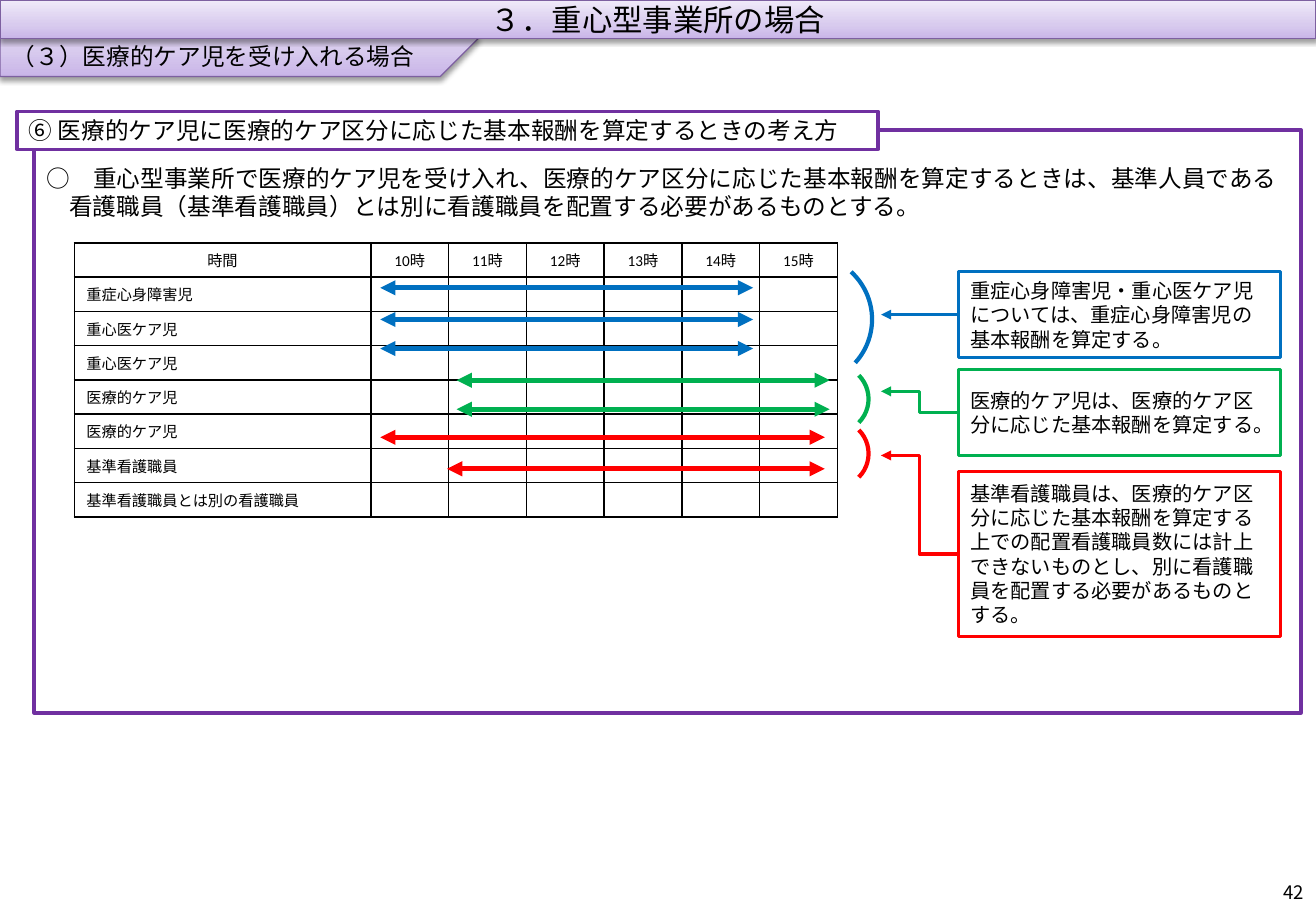
from lxml import etree
from pptx import Presentation
from pptx.dml.color import RGBColor
from pptx.enum import shapes, text
from pptx.oxml.ns import qn
from pptx.util import Pt

BLACK = RGBColor(0x00, 0x00, 0x00)
WHITE = RGBColor(0xFF, 0xFF, 0xFF)
PURPLE = RGBColor(0x70, 0x30, 0xA0)
BANNER_EDGE = RGBColor(0x7D, 0x60, 0xA0)
BLUE = RGBColor(0x00, 0x70, 0xC0)
GREEN = RGBColor(0x00, 0xB0, 0x50)
RED = RGBColor(0xFF, 0x00, 0x00)
BANNER_STOPS = [(0, "C9B5E8"), (35, "D8CBEE"), (100, "F0EAF9")]
CJK, LATIN = "Noto Sans CJK JP", "Calibri"

TITLE = "３．重心型事業所の場合"
SUBTITLE = "（３）医療的ケア児を受け入れる場合"
HEADING = "⑥ 医療的ケア児に医療的ケア区分に応じた基本報酬を算定するときの考え方"
BODY = ("○　重心型事業所で医療的ケア児を受け入れ、医療的ケア区分に応じた基本報酬を算定するときは、"
        "基準人員である看護職員（基準看護職員）とは別に看護職員を配置する必要があるものとする。")
PAGE = "42"

HEADER = ["時間"] + [f"{hour}時" for hour in range(10, 16)]
PEOPLE = ["重症心身障害児", "重心医ケア児", "重心医ケア児", "医療的ケア児", "医療的ケア児",
          "基準看護職員", "基準看護職員とは別の看護職員"]
TABLE_LEFT, TABLE_TOP, ROW_H = 44, 144, 20.3
NAME_W, HOUR_W = 175.8, 46.1

# colour, left, right, y
SPANS = [
    (BLUE, 225.4, 446.4, 170.6), (BLUE, 225.4, 446.4, 189.4), (BLUE, 225.4, 446.4, 206.6),
    (GREEN, 270.7, 491.8, 225.4), (GREEN, 270.7, 491.8, 242.6),
    (RED, 225.4, 488.9, 259.2), (RED, 265, 488.9, 277.9),
]
# colour, left, top, size, rotation
ARCS = [(BLUE, 440.6, 151.2, 76.3, 42.4), (GREEN, 475.2, 216.7, 39.6, 45),
        (RED, 475.2, 249.1, 39.6, 45)]
# colour, top, height, y of the arrow tip, wording
CALLOUTS = [
    (BLUE, 161, 51, 186.5, "重症心身障害児・重心医ケア児については、重症心身障害児の基本報酬を算定する。"),
    (GREEN, 219, 51, 232, "医療的ケア児は、医療的ケア区分に応じた基本報酬を算定する。"),
    (RED, 279.4, 98, 270, "基準看護職員は、医療的ケア区分に応じた基本報酬を算定する上での配置看護職員数には"
                          "計上できないものとし、別に看護職員を配置する必要があるものとする。"),
]
CALLOUT_LEFT, CALLOUT_W, TIP_X = 568, 191, 522.2

prs = Presentation()
prs.slide_width, prs.slide_height = Pt(780), Pt(540)
s = prs.slides.add_slide(prs.slide_layouts[6])


def add_child(parent, tag, **attrs):
    return etree.SubElement(parent, qn(tag), {k: str(v) for k, v in attrs.items()})


def write(tf, words, size, font=CJK, align=None, anchor=text.MSO_ANCHOR.MIDDLE):
    tf.text = words
    tf.word_wrap = True
    tf.vertical_anchor = anchor
    p = tf.paragraphs[0]
    p.alignment = align or text.PP_ALIGN.LEFT
    for r in p.runs:
        r.font.size, r.font.name = Pt(size), font
        r.font.color.rgb = BLACK
        add_child(r.font._element, "a:ea", typeface=CJK)


def add_box(box, edge, width=2, kind=shapes.MSO_SHAPE.RECTANGLE):
    sp = s.shapes.add_shape(kind, *map(Pt, box))
    sp.shadow.inherit = False
    sp.fill.solid()
    sp.fill.fore_color.rgb = WHITE
    sp.line.color.rgb, sp.line.width = edge, Pt(width)
    return sp


def add_banner(box, kind):
    """Purple gradient box with a soft shadow below it."""
    sp = add_box(box, BANNER_EDGE, 0.75, kind)
    sp.fill.gradient()
    sp.fill.gradient_angle = 90
    props = sp._element.spPr
    stops = props.find(qn("a:gradFill")).find(qn("a:gsLst"))
    for old in list(stops):
        stops.remove(old)
    for pos, colour in BANNER_STOPS:
        add_child(add_child(stops, "a:gs", pos=pos * 1000), "a:srgbClr", val=colour)
    shadow = add_child(props.find(qn("a:effectLst")), "a:outerShdw", blurRad=int(Pt(3.1)),
                       dist=int(Pt(1.6)), dir=90 * 60000, rotWithShape=0)
    add_child(add_child(shadow, "a:srgbClr", val="000000"), "a:alpha", val=38000)
    return sp


def hang(sp, top_inset):
    """Hanging indent for a paragraph that opens with a mark."""
    sp.text_frame.margin_top, sp.text_frame.margin_bottom = Pt(top_inset), Pt(5.7)
    props = sp.text_frame.paragraphs[0]._p.get_or_add_pPr()
    props.set("marL", str(int(Pt(13.7))))
    props.set("indent", str(int(Pt(-13.7))))


def add_arrow(start, end, colour, width, ends, kind=shapes.MSO_CONNECTOR.STRAIGHT):
    c = s.shapes.add_connector(kind, *map(Pt, start + end))
    c.line.color.rgb, c.line.width = colour, Pt(width)
    for tag in ends:
        add_child(c.line._get_or_add_ln(), tag, type="triangle")
    add_child(c._element.spPr, "a:effectLst")


def set_borders(cell):
    props = cell._tc.get_or_add_tcPr()
    for i, side in enumerate(("a:lnL", "a:lnR", "a:lnT", "a:lnB")):
        ln = etree.Element(qn(side), {"w": str(int(Pt(1)))})
        add_child(add_child(ln, "a:solidFill"), "a:srgbClr", val=str(BLACK))
        props.insert(i, ln)


page = s.shapes.add_textbox(Pt(599), Pt(514), Pt(181), Pt(29))
write(page.text_frame, PAGE, 11, align=text.PP_ALIGN.RIGHT)

frame = add_box((20.2, 77, 751, 345.6), PURPLE)
write(frame.text_frame, BODY, 14, anchor=text.MSO_ANCHOR.TOP)
hang(frame, 20.2)

subtitle = add_banner((0, 0, 283.7, 45.4), shapes.MSO_SHAPE.PENTAGON)
write(subtitle.text_frame, SUBTITLE, 14, anchor=text.MSO_ANCHOR.BOTTOM)
title = add_banner((0, 0, 780, 22.7), shapes.MSO_SHAPE.RECTANGLE)
write(title.text_frame, TITLE, 18, align=text.PP_ALIGN.CENTER)

heading = add_box((10, 66, 510.5, 22.5), PURPLE)
write(heading.text_frame, HEADING, 14)
hang(heading, 5.7)

rows = [HEADER] + [[name] + [""] * (len(HEADER) - 1) for name in PEOPLE]
widths = [NAME_W] + [HOUR_W] * (len(HEADER) - 1)
table = s.shapes.add_table(len(rows), len(widths), Pt(TABLE_LEFT), Pt(TABLE_TOP),
                           Pt(sum(widths)), Pt(ROW_H * len(rows))).table
for column, width in zip(table.columns, widths):
    column.width = Pt(width)
for i, row in enumerate(rows):
    table.rows[i].height = Pt(ROW_H)
    for j, words in enumerate(row):
        cell = table.cell(i, j)
        cell.margin_top = cell.margin_bottom = 0
        cell.vertical_anchor = text.MSO_ANCHOR.MIDDLE
        cell.fill.solid()
        cell.fill.fore_color.rgb = WHITE
        set_borders(cell)
        if words:
            write(cell.text_frame, words, 9, LATIN, None if i else text.PP_ALIGN.CENTER)
            cell.vertical_anchor = text.MSO_ANCHOR.MIDDLE
        else:
            cell.text_frame.paragraphs[0].font.size = Pt(9)

for colour, left, right, y in SPANS:
    add_arrow((left, y), (right, y), colour, 3, ("a:headEnd", "a:tailEnd"))

for colour, left, top, size, turn in ARCS:
    arc = add_box((left, top, size, size), colour, 2.5, shapes.MSO_SHAPE.ARC)
    arc.fill.background()
    arc.rotation = turn

for colour, top, height, tip_y, words in CALLOUTS:
    sp = add_box((CALLOUT_LEFT, top, CALLOUT_W, height), colour)
    write(sp.text_frame, words, 12, LATIN)
    middle = top + height / 2
    straight = middle == tip_y
    add_arrow((CALLOUT_LEFT, middle), (TIP_X, tip_y), colour, 2, ("a:tailEnd",),
              shapes.MSO_CONNECTOR.STRAIGHT if straight else shapes.MSO_CONNECTOR.ELBOW)

prs.save("out.pptx")
